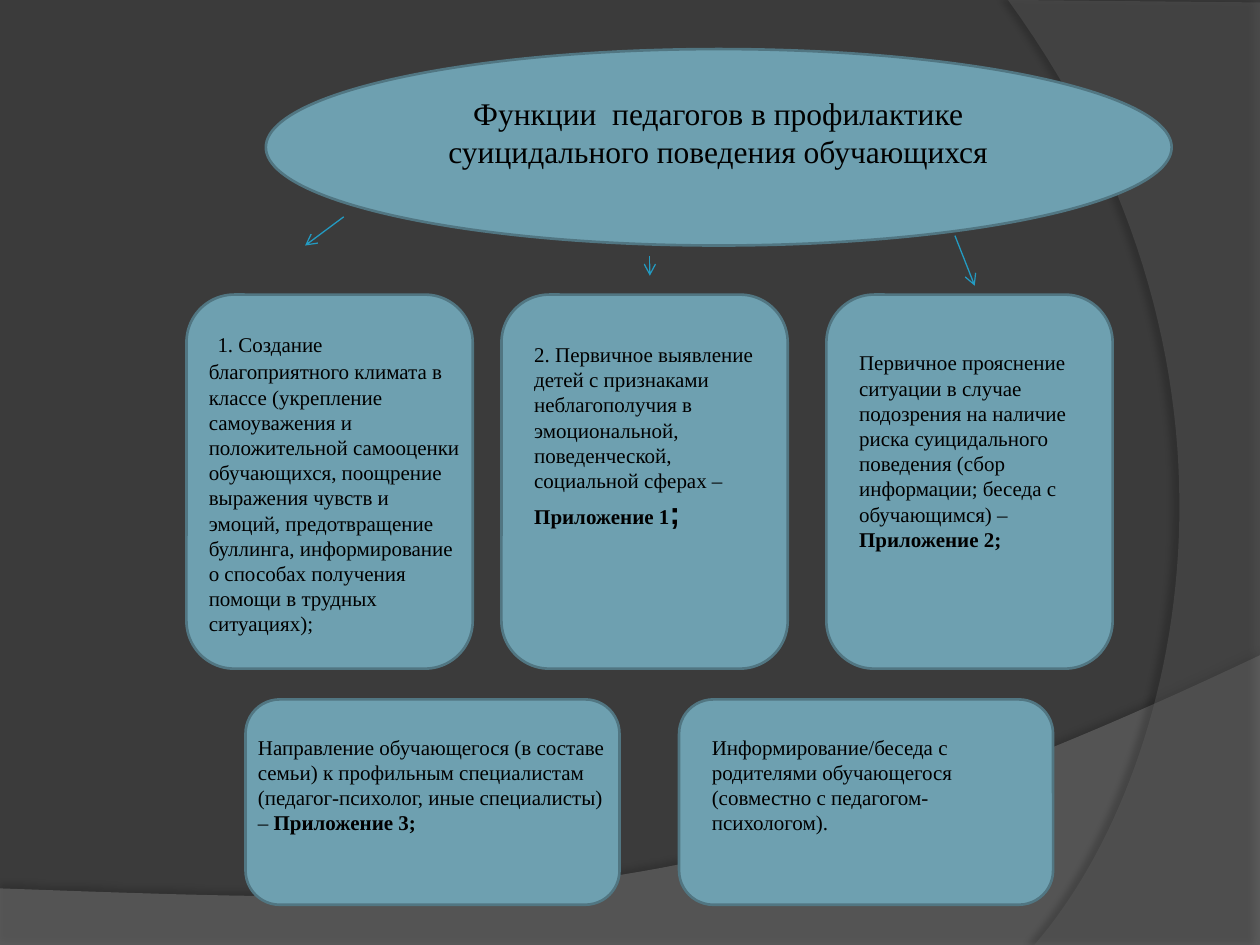
from dataclasses import dataclass

from lxml import etree
from pptx import Presentation
from pptx.dml.color import RGBColor
from pptx.enum import shapes, text
from pptx.oxml import ns
from pptx.util import Cm, Pt

SERIF, SANS = "Times New Roman", "Arial"
PANEL, EDGE, ARROW = "6EA0B0", "517682", "239BC2"


@dataclass
class Box:
    x: float
    y: float
    w: float
    h: float

    def emu(self) -> list:
        return [Cm(v) for v in (self.x, self.y, self.w, self.h)]


@dataclass
class Run:
    words: str
    bold: bool = False
    size: int = 12
    font: str = SERIF
    color: str = "000000"


@dataclass
class Panel:
    shape: Box
    label: Box
    runs: list


@dataclass
class Sweep:
    """Background outline: straight corners closed by one Bezier curve."""
    corners: list
    curve: list
    color: str
    opacity: int
    shadow: tuple  # opacity %, blur pt, distance pt, direction in degrees


def rgb(value: str) -> RGBColor:
    return RGBColor.from_string(value)


def add_xml(parent, tag: str, **attrs):
    return etree.SubElement(parent, ns.qn(tag), {k: str(v) for k, v in attrs.items()})


def bezier(points: list, steps: int = 60) -> list:
    a, b, c, d = points
    result = []
    for i in range(1, steps + 1):
        t = i / steps
        result.append(tuple((1 - t) ** 3 * a[k] + 3 * (1 - t) ** 2 * t * b[k]
                            + 3 * (1 - t) * t ** 2 * c[k] + t ** 3 * d[k] for k in (0, 1)))
    return result


def draw_sweep(s, sweep: Sweep) -> None:
    start, *rest = [(Cm(x), Cm(y)) for x, y in sweep.corners + bezier(sweep.curve)]
    builder = s.shapes.build_freeform(*start)
    builder.add_line_segments(rest, close=True)
    sp = builder.convert_to_shape()
    sp.fill.solid()
    sp.fill.fore_color.rgb = rgb(sweep.color)
    sp.line.fill.background()
    sp.shadow.inherit = False
    pr = sp.element.spPr
    add_xml(pr.find(".//" + ns.qn("a:srgbClr")), "a:alpha", val=sweep.opacity * 1000)
    opacity, blur, dist, angle = sweep.shadow
    shadow = add_xml(pr.find(ns.qn("a:effectLst")), "a:outerShdw", blurRad=Pt(blur),
                     dist=Pt(dist), dir=angle * 60000, algn="ctr", rotWithShape=0)
    add_xml(add_xml(shadow, "a:srgbClr", val="000000"), "a:alpha", val=opacity * 1000)


def draw_shape(s, kind: shapes.MSO_SHAPE, box: Box) -> None:
    sp = s.shapes.add_shape(kind, *box.emu())
    sp.shadow.inherit = False
    sp.fill.solid()
    sp.fill.fore_color.rgb = rgb(PANEL)
    sp.line.color.rgb = rgb(EDGE)
    sp.line.width = Pt(1.5)


def style_font(font, run: Run) -> None:
    font.name, font.size, font.bold = run.font, Pt(run.size), run.bold
    font.color.rgb = rgb(run.color)


def draw_label(s, box: Box, runs: list, align=text.PP_ALIGN.LEFT) -> None:
    tf = s.shapes.add_textbox(*box.emu()).text_frame
    tf.word_wrap = True
    tf.auto_size = text.MSO_AUTO_SIZE.SHAPE_TO_FIT_TEXT
    p = tf.paragraphs[0]
    p.alignment = align
    if len(runs) == 1:
        style_font(p.font, runs[0])
    for run in runs:
        r = p.add_run()
        r.text = run.words
        if len(runs) > 1:
            style_font(r.font, run)


def draw_arrow(s, x1: float, y1: float, x2: float, y2: float) -> None:
    line = s.shapes.add_connector(shapes.MSO_CONNECTOR.STRAIGHT, Cm(x1), Cm(y1), Cm(x2), Cm(y2))
    line.line.color.rgb = rgb(ARROW)
    line.line.width = Pt(0.75)
    add_xml(line.line._get_or_add_ln(), "a:tailEnd", type="arrow")
    add_xml(line._element.spPr, "a:effectLst")


def upper(x: float) -> Box:
    return Box(x, 5.94, 5.77, 7.54)


def lower(x: float) -> Box:
    return Box(x, 14.1, 7.54, 4.14)


SWEEPS = [
    Sweep([(0, 17.91), (0, 19.08), (25.4, 19.08), (25.4, 13.21)],
          [(25.4, 13.21), (14.2, 18.52), (9.93, 18.26), (0, 17.91)],
          "7F7F7F", 45, (35, 4, 3.5, 270)),
    Sweep([(25.4, 0.05), (25.4, 19.05), (20.85, 19.05)],
          [(20.85, 19.05), (23.75, 15.72), (25.86, 7.62), (20.32, 0)],
          "5E5E5E", 40, (45, 4, 4, 180)),
]

PANELS = [
    Panel(upper(3.76), Box(3.96, 6.35, 5.56, 7.19), [
        Run(" ", True, 18, SANS, "FFFFFF"),
        Run("1. Создание благоприятного климата в классе (укрепление самоуважения и "
            "положительной самооценки обучающихся, поощрение выражения чувств и эмоций, "
            "предотвращение буллинга, информирование о способах получения помощи в "
            "трудных ситуациях);")]),
    Panel(upper(10.11), Box(10.52, 6.76, 4.95, 4.11), [
        Run("2. Первичное выявление детей с признаками неблагополучия в эмоциональной, "
            "поведенческой, социальной сферах – "),
        Run("Приложение 1", True), Run(";", True, 18, SANS)]),
    Panel(upper(16.66), Box(17.07, 6.93, 4.95, 4.37), [
        Run("Первичное прояснение ситуации в случае подозрения на наличие риска "
            "суицидального поведения (сбор информации; беседа с обучающимся) – "),
        Run("Приложение 2;", True)]),
    Panel(lower(4.95), Box(4.95, 14.68, 7.54, 2.31), [
        Run("Направление обучающегося (в составе семьи) к профильным специалистам "
            "(педагог-психолог, иные специалисты) – "),
        Run("Приложение 3;", True)]),
    Panel(lower(13.69), Box(14.1, 14.68, 6.93, 2.31), [
        Run("Информирование/беседа с родителями обучающегося "
            "(совместно с педагогом-психологом).")]),
]

ARROWS = [(6.93, 4.37, 6.15, 4.95), (13.1, 5.16, 13.1, 5.56), (19.25, 4.75, 19.65, 5.76)]


def main() -> None:
    prs = Presentation()
    prs.slide_width, prs.slide_height = Cm(25.4), Cm(19.05)
    s = prs.slides.add_slide(prs.slide_layouts[6])

    # Background
    s.background.fill.solid()
    s.background.fill.fore_color.rgb = rgb("3B3B3B")
    for sweep in SWEEPS:
        draw_sweep(s, sweep)

    # Title
    draw_shape(s, shapes.MSO_SHAPE.OVAL, Box(5.36, 0.99, 18.26, 3.96))
    draw_label(s, Box(8.13, 1.78, 12.7, 1.8),
               [Run("Функции  педагогов в профилактике суицидального поведения обучающихся",
                    size=18)], text.PP_ALIGN.CENTER)

    # Functions
    for panel in PANELS:
        draw_shape(s, shapes.MSO_SHAPE.ROUNDED_RECTANGLE, panel.shape)
        draw_label(s, panel.label, panel.runs)

    # Arrows from the title
    for arrow in ARROWS:
        draw_arrow(s, *arrow)

    prs.save("out.pptx")


if __name__ == "__main__":
    main()
